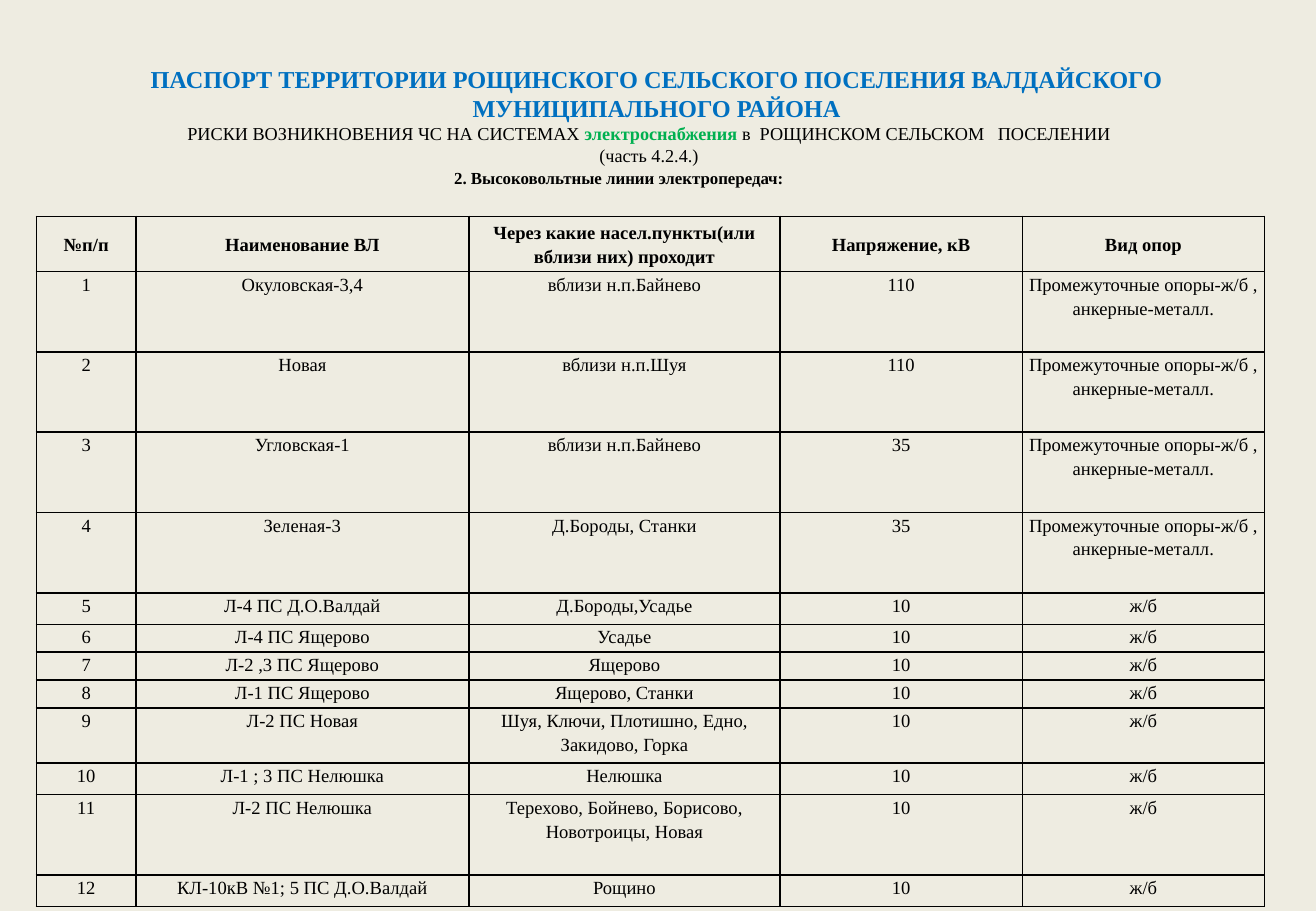
from dataclasses import dataclass

from lxml import etree
from pptx import Presentation
from pptx import slide as sl
from pptx import table as tb
from pptx import util as u
from pptx.dml import color
from pptx.enum import text
from pptx.oxml import ns
from pptx.text import text as tx

FONT = "Times New Roman"
COLORS = {"background": "EEECE1", "heading": "0070C0", "accent": "00B050", "ink": "000000"}


@dataclass(frozen=True)
class Span:
    words: str
    size: float
    color: str = "ink"
    bold: bool = False


@dataclass(frozen=True)
class Caption:
    left: float
    top: float
    width: float
    height: float
    lines: tuple[tuple[Span, ...], ...]
    align: text.PP_ALIGN
    margins: tuple[float, float, float, float]
    anchor: text.MSO_ANCHOR
    wrap: bool


@dataclass(frozen=True)
class PowerLine:
    name: str
    places: str
    voltage: str
    supports: str
    height: float


MIXED = "Промежуточные опоры-ж/б , анкерные-металл."
CONCRETE = "ж/б"
TALL, DOUBLE, MEDIUM, LOW = 47.6, 32.8, 18.7, 16.5

HEADINGS = ("№п/п", "Наименование ВЛ", "Через какие насел.пункты(или вблизи них) проходит",
            "Напряжение, кВ", "Вид опор")
COLUMN_WIDTHS = (59, 197.3, 184.5, 143.6, 143.6)
POWER_LINES = (
    PowerLine("Окуловская-3,4", "вблизи н.п.Байнево", "110", MIXED, TALL),
    PowerLine("Новая", "вблизи н.п.Шуя", "110", MIXED, TALL),
    PowerLine("Угловская-1", "вблизи н.п.Байнево", "35", MIXED, TALL),
    PowerLine("Зеленая-3", "Д.Бороды, Станки", "35", MIXED, TALL),
    PowerLine("Л-4 ПС Д.О.Валдай", "Д.Бороды,Усадье", "10", CONCRETE, MEDIUM),
    PowerLine("Л-4 ПС Ящерово", "Усадье", "10", CONCRETE, LOW),
    PowerLine("Л-2 ,3 ПС Ящерово", "Ящерово", "10", CONCRETE, LOW),
    PowerLine("Л-1 ПС Ящерово", "Ящерово, Станки", "10", CONCRETE, LOW),
    PowerLine("Л-2 ПС Новая", "Шуя, Ключи, Плотишно, Едно, Закидово, Горка", "10", CONCRETE, DOUBLE),
    PowerLine("Л-1 ; 3 ПС Нелюшка", "Нелюшка", "10", CONCRETE, MEDIUM),
    PowerLine("Л-2 ПС Нелюшка", "Терехово, Бойнево, Борисово, Новотроицы, Новая", "10", CONCRETE, TALL),
    PowerLine("КЛ-10кВ №1; 5 ПС Д.О.Валдай", "Рощино", "10", CONCRETE, MEDIUM),
)

PASSPORT = Caption(
    36.7, 32.4, 704.9, 64.8,
    (
        (Span("ПАСПОРТ ТЕРРИТОРИИ РОЩИНСКОГО СЕЛЬСКОГО ПОСЕЛЕНИЯ ВАЛДАЙСКОГО "
              "МУНИЦИПАЛЬНОГО РАЙОНА", 14.4, "heading", True),),
        (Span("РИСКИ ВОЗНИКНОВЕНИЯ ЧС НА СИСТЕМАХ ", 10.8),
         Span("электроснабжения ", 10.8, "accent", True),
         Span("в  РОЩИНСКОМ СЕЛЬСКОМ   ПОСЕЛЕНИИ", 10.8)),
        (Span("(часть 4.2.4.)", 10.8),),
    ),
    text.PP_ALIGN.CENTER, (7.2, 5.5, 7.2, 0), text.MSO_ANCHOR.TOP, True,
)
SECTION = Caption(
    264.2, 96.5, 210.2, 17.3,
    ((Span("2. Высоковольтные линии электропередач:", 10, bold=True),),),
    text.PP_ALIGN.LEFT, (5, 2.9, 5, 2.9), text.MSO_ANCHOR.MIDDLE, False,
)
SUBTITLE_RIGHT_INDENT = 9


def style_font(font: tx.Font, size: float, ink: str, bold: bool) -> None:
    font.name = FONT
    font.size = u.Pt(size)
    font.bold = bold
    font.color.rgb = color.RGBColor.from_string(COLORS[ink])


def draw_caption(page: sl.Slide, caption: Caption) -> tx.TextFrame:
    frame = page.shapes.add_textbox(
        u.Pt(caption.left), u.Pt(caption.top), u.Pt(caption.width), u.Pt(caption.height)
    ).text_frame
    frame.word_wrap = caption.wrap
    frame.vertical_anchor = caption.anchor
    frame.margin_left, frame.margin_top, frame.margin_right, frame.margin_bottom = map(u.Pt, caption.margins)
    for index, spans in enumerate(caption.lines):
        line = frame.add_paragraph() if index else frame.paragraphs[0]
        line.alignment = caption.align
        for span in spans:
            run = line.add_run()
            run.text = span.words
            style_font(run.font, span.size, span.color, span.bold)
    return frame


def draw_borders(cell: tb._Cell) -> None:
    properties = cell._tc.get_or_add_tcPr()
    for side in ("a:lnL", "a:lnR", "a:lnT", "a:lnB"):
        border = etree.SubElement(properties, ns.qn(side), w=str(u.Pt(1)))
        fill = etree.SubElement(border, ns.qn("a:solidFill"))
        etree.SubElement(fill, ns.qn("a:srgbClr"), val=COLORS["ink"])


def fill_cell(cell: tb._Cell, words: str, heading: bool) -> None:
    cell.margin_left = cell.margin_right = u.Pt(3)
    cell.margin_top = cell.margin_bottom = u.Pt(0)
    cell.vertical_anchor = text.MSO_ANCHOR.MIDDLE if heading else text.MSO_ANCHOR.TOP
    draw_borders(cell)
    cell.fill.background()
    cell.text_frame.text = words
    entry = cell.text_frame.paragraphs[0]
    entry.alignment = text.PP_ALIGN.CENTER
    entry.line_spacing = 1.15
    entry.space_after = u.Pt(10)
    style_font(entry.runs[0].font, 11, "ink", heading)


def draw_power_lines(page: sl.Slide) -> None:
    rows = [HEADINGS] + [
        (str(number), line.name, line.places, line.voltage, line.supports)
        for number, line in enumerate(POWER_LINES, 1)
    ]
    heights = [DOUBLE] + [line.height for line in POWER_LINES]
    register = page.shapes.add_table(
        len(rows), len(HEADINGS), u.Pt(21.6), u.Pt(128.2), u.Pt(sum(COLUMN_WIDTHS)), u.Pt(sum(heights))
    ).table
    register.first_row = register.horz_banding = False
    for column, width in zip(register.columns, COLUMN_WIDTHS):
        column.width = u.Pt(width)
    for index, (row, height, entries) in enumerate(zip(register.rows, heights, rows)):
        row.height = u.Pt(height)
        for cell, words in zip(row.cells, entries):
            fill_cell(cell, words, index == 0)


def main() -> None:
    deck = Presentation()
    deck.slide_width, deck.slide_height = u.Pt(780), u.Pt(540)
    page = deck.slides.add_slide(deck.slide_layouts[6])
    page.background.fill.solid()
    page.background.fill.fore_color.rgb = color.RGBColor.from_string(COLORS["background"])
    passport = draw_caption(page, PASSPORT)
    passport.paragraphs[1]._p.get_or_add_pPr().set("marR", str(u.Pt(SUBTITLE_RIGHT_INDENT)))
    draw_power_lines(page)
    draw_caption(page, SECTION)
    deck.save("out.pptx")


if __name__ == "__main__":
    main()
